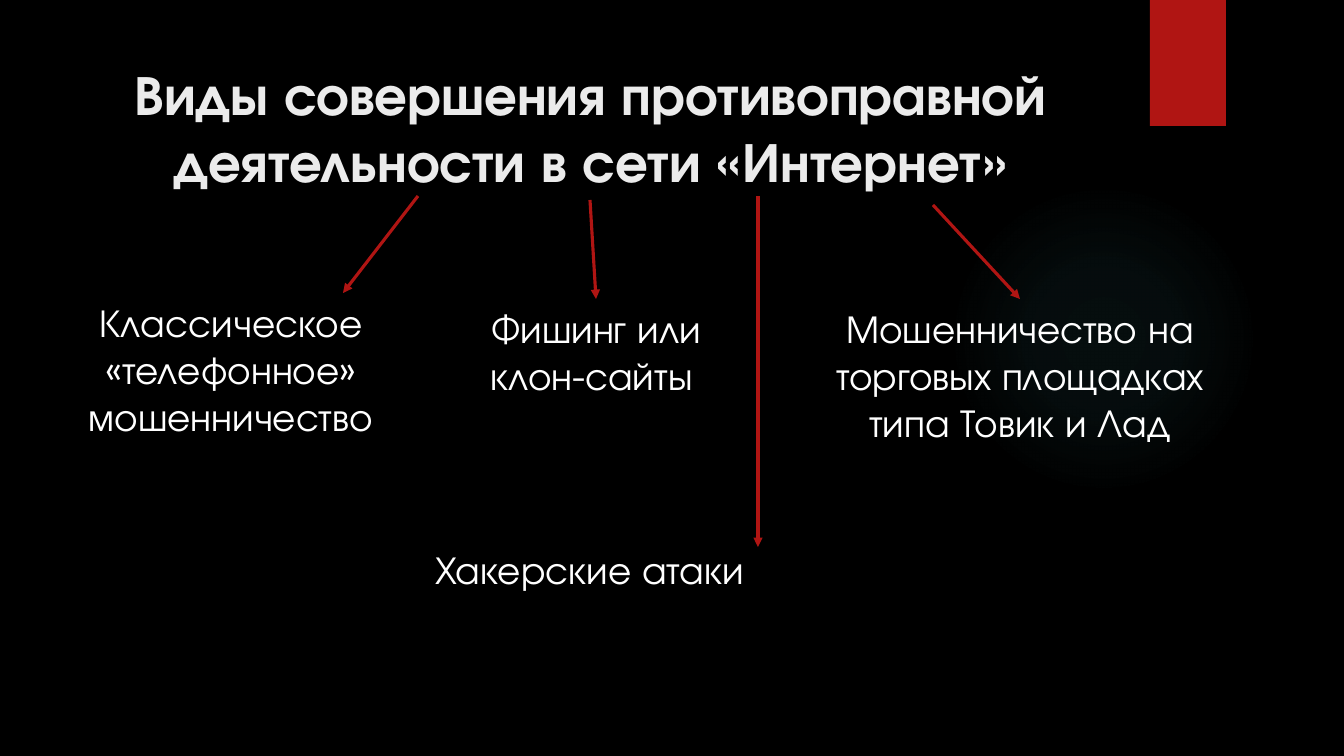
"""Build a slide on the kinds of unlawful activity on the Internet."""
import lxml.etree
import pptx
import pptx.dml.color
import pptx.enum.shapes
import pptx.enum.text
import pptx.oxml
import pptx.oxml.ns
import pptx.util

WIDTH, HEIGHT = 1344, 756
SCALE = 12192000 / WIDTH
FONT = "TeX Gyre Adventor"
COLORS = {
    "background": "000000",
    "accent": "B01513",
    "glow": "50B9C1",
    "title": "EBEBEB",
    "text": "FFFFFF",
}
GLOW_STOPS = [(0, 7), (36, 6), (69, 0)]
KINDS = [
    ((58, 293, 346, 152), [("Классическое «телефонное» мошенничество", 28)]),
    ((462, 299, 268, 105), [("Фишинг или клон-сайты", 28), (" ", 24)]),
    ((786, 299, 468, 152),
     [("Мошенничество на торговых площадках типа Товик и Лад", 28)]),
    ((401, 540, 377, 57), [("Хакерские атаки", 28)]),
]
ARROWS = [
    (418, 196, 343, 293),
    (590, 200, 596, 299),
    (933, 205, 1020, 299),
    (758, 196, 758, 547),
]


def px(*lengths):
    """Turn pixel lengths into a list of EMU."""
    return [pptx.util.Emu(round(n * SCALE)) for n in lengths]


def rgb(name):
    """Return the named colour."""
    return pptx.dml.color.RGBColor.from_string(COLORS[name])


def add_runs(tf, runs, color, bold=False):
    """Write centred runs into the first paragraph of a frame."""
    tf.word_wrap = True
    p = tf.paragraphs[0]
    p.alignment = pptx.enum.text.PP_ALIGN.CENTER
    for text, size in runs:
        r = p.add_run()
        r.text = text
        r.font.name = FONT
        r.font.size = pptx.util.Pt(size)
        r.font.bold = bold
        r.font.color.rgb = rgb(color)


def add_plain_shape(s, kind, box):
    """Add a preset shape without line or shadow."""
    sp = s.shapes.add_shape(kind, *px(*box))
    sp.shadow.inherit = False
    sp.line.fill.background()
    return sp


def add_glow(s, box):
    """Add a circle that fades out from its centre."""
    sp = add_plain_shape(s, pptx.enum.shapes.MSO_SHAPE.OVAL, box)
    sp.fill.background()
    stops = "".join(
        f'<a:gs pos="{pos * 1000}"><a:srgbClr val="{COLORS["glow"]}">'
        f'<a:alpha val="{alpha * 1000}"/></a:srgbClr></a:gs>'
        for pos, alpha in GLOW_STOPS)
    grad = pptx.oxml.parse_xml(
        f'<a:gradFill {pptx.oxml.ns.nsdecls("a")}><a:gsLst>{stops}</a:gsLst>'
        '<a:path path="circle">'
        '<a:fillToRect l="50000" t="50000" r="50000" b="50000"/>'
        '</a:path></a:gradFill>')
    spPr = sp.element.spPr
    spPr.replace(spPr.find(pptx.oxml.ns.qn("a:noFill")), grad)


def add_ribbon(s, box):
    """Add the solid accent ribbon."""
    sp = add_plain_shape(s, pptx.enum.shapes.MSO_SHAPE.RECTANGLE, box)
    sp.fill.solid()
    sp.fill.fore_color.rgb = rgb("accent")


def add_title(s, box, text):
    """Place and fill the title placeholder."""
    sp = s.shapes.title
    sp.left, sp.top, sp.width, sp.height = px(*box)
    tf = sp.text_frame
    tf.auto_size = pptx.enum.text.MSO_AUTO_SIZE.NONE
    tf.vertical_anchor = pptx.enum.text.MSO_ANCHOR.MIDDLE
    add_runs(tf, [(text, 40)], "title", bold=True)


def add_label(s, box, runs):
    """Add a centred text box."""
    tf = s.shapes.add_textbox(*px(*box)).text_frame
    tf.auto_size = pptx.enum.text.MSO_AUTO_SIZE.SHAPE_TO_FIT_TEXT
    add_runs(tf, runs, "text")


def add_arrow(s, ends):
    """Add an accent line with a triangle at its end."""
    cxn = s.shapes.add_connector(
        pptx.enum.shapes.MSO_CONNECTOR.STRAIGHT, *px(*ends))
    cxn.line.color.rgb = rgb("accent")
    cxn.line.width = pptx.util.Pt(2.25)
    qn = pptx.oxml.ns.qn
    spPr = cxn.element.spPr
    lxml.etree.SubElement(spPr.find(qn("a:ln")), qn("a:tailEnd"), type="triangle")
    lxml.etree.SubElement(spPr, qn("a:effectLst"))


def main():
    """Build and save the presentation."""
    prs = pptx.Presentation()
    prs.slide_width, prs.slide_height = px(WIDTH, HEIGHT)
    s = prs.slides.add_slide(prs.slide_layouts[5])
    s.background.fill.solid()
    s.background.fill.fore_color.rgb = rgb("background")
    add_glow(s, (949, 184, 310, 310))
    add_ribbon(s, (1150, 0, 76, 126))
    add_title(s, (72, 50, 1037, 154),
              "Виды совершения противоправной деятельности в сети «Интернет»")
    for box, runs in KINDS:
        add_label(s, box, runs)
    for ends in ARROWS:
        add_arrow(s, ends)
    prs.save("out.pptx")


if __name__ == "__main__":
    main()
